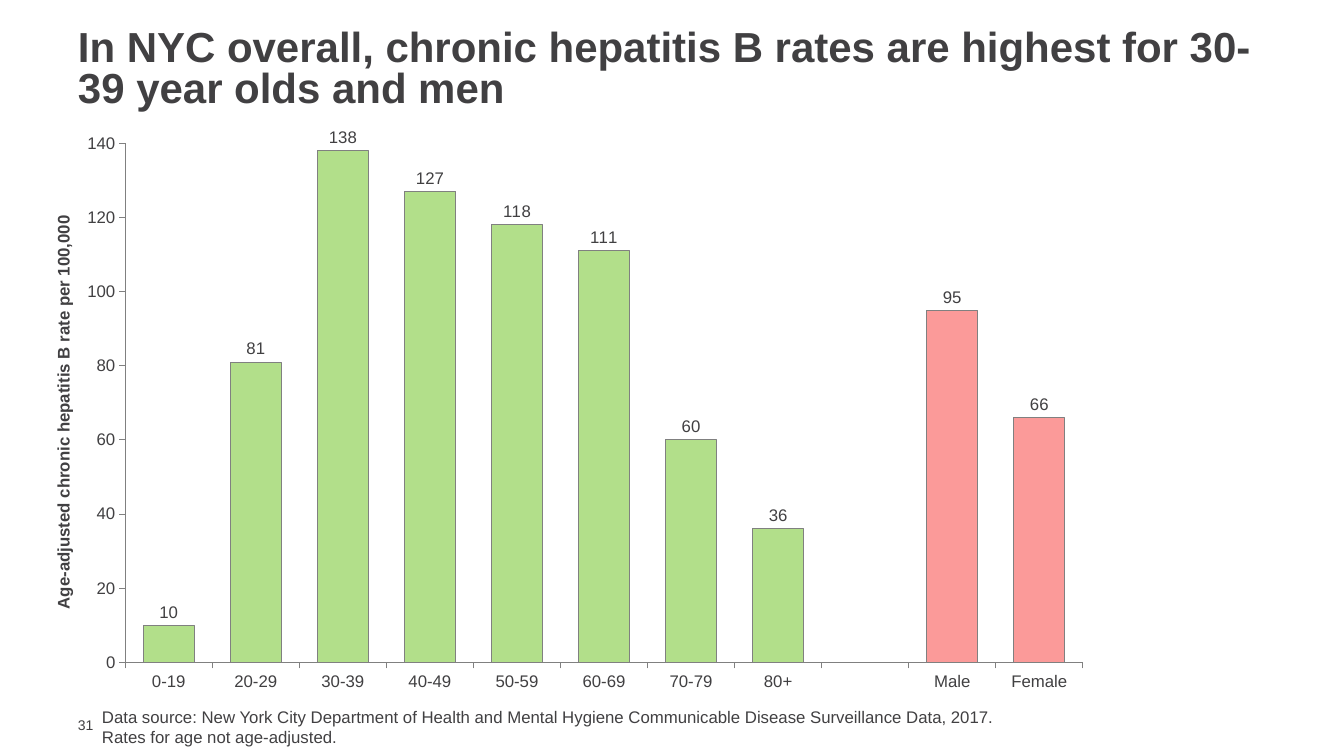
from dataclasses import dataclass

from lxml import etree
from pptx import Presentation
from pptx.chart.data import CategoryChartData
from pptx.dml.color import RGBColor
from pptx.enum.chart import XL_CHART_TYPE as ChartType
from pptx.enum.chart import XL_LABEL_POSITION as LabelPos
from pptx.enum.chart import XL_TICK_MARK as Tick
from pptx.enum.text import MSO_ANCHOR as Anchor
from pptx.oxml import parse_xml
from pptx.oxml.ns import nsdecls, qn
from pptx.util import Pt

PX = 914400 / 100.8


def px(n):
    return round(n * PX)


@dataclass(frozen=True)
class Theme:
    font: str = "Arial"
    text: RGBColor = RGBColor(0x41, 0x40, 0x42)
    line: RGBColor = RGBColor(0x80, 0x80, 0x80)
    age: RGBColor = RGBColor(0xB2, 0xDF, 0x8A)
    sex: RGBColor = RGBColor(0xFB, 0x9A, 0x99)
    title: int = 30
    body: int = 12
    small: int = 10


class Deck:
    def __init__(self, theme):
        self.theme = theme
        self.prs = Presentation()
        self.prs.slide_width, self.prs.slide_height = px(1344), px(756)
        self.s = self.prs.slides.add_slide(self.prs.slide_layouts[6])

    def style_font(self, font, size, bold=False):
        font.name, font.size, font.bold = self.theme.font, Pt(size), bold
        font.color.rgb = self.theme.text

    def style_line(self, line):
        line.color.rgb, line.width = self.theme.line, Pt(0.75)

    def text(self, box, lines, size, bold=False, anchor=Anchor.TOP,
             spacing=None, inset_y=5):
        tf = self.s.shapes.add_textbox(*map(px, box)).text_frame
        tf.word_wrap, tf.vertical_anchor = True, anchor
        tf.margin_left, tf.margin_right = px(10), 0
        tf.margin_top = tf.margin_bottom = px(inset_y)
        for i, line in enumerate(lines):
            p = tf.paragraphs[0] if i == 0 else tf.add_paragraph()
            p.line_spacing = spacing
            r = p.add_run()
            r.text = line
            self.style_font(r.font, size, bold)

    def axis(self, axis):
        axis.has_major_gridlines = False
        axis.major_tick_mark, axis.minor_tick_mark = Tick.OUTSIDE, Tick.NONE
        self.style_font(axis.tick_labels.font, self.theme.body)
        self.style_line(axis.format.line)

    def column_chart(self, box, groups, axis_title, top, plot_box):
        """Draw (colour, {category: value}) groups as one series."""
        data = CategoryChartData(number_format="0")
        bars = [(cat, val, colour) for colour, rates in groups
                for cat, val in rates.items()]
        data.categories = [cat for cat, _, _ in bars]
        data.add_series("Series 1", [val for _, val, _ in bars])
        chart = self.s.shapes.add_chart(
            ChartType.COLUMN_CLUSTERED, *map(px, box), data).chart
        chart.has_legend = chart.has_title = False
        self.style_font(chart.font, self.theme.small)

        self.axis(chart.category_axis)
        value = chart.value_axis
        self.axis(value)
        value.minimum_scale, value.maximum_scale = 0, top
        value.major_unit = 20
        value.tick_labels.number_format = "0"
        value.tick_labels.number_format_is_linked = False
        tf = value.axis_title.text_frame
        r = tf.paragraphs[0].add_run()
        r.text = axis_title
        self.style_font(r.font, self.theme.body, True)

        plot = chart.plots[0]
        plot.gap_width, plot.vary_by_categories = 70, False
        series = plot.series[0]
        base = bars[0][2]
        series.format.fill.solid()
        series.format.fill.fore_color.rgb = base
        self.style_line(series.format.line)
        for i, (_, _, colour) in enumerate(bars):
            if colour != base:
                fmt = series.points[i].format
                fmt.fill.solid()
                fmt.fill.fore_color.rgb = colour
                self.style_line(fmt.line)
        labels = series.data_labels
        labels.show_value, labels.position = True, LabelPos.OUTSIDE_END
        labels.number_format, labels.number_format_is_linked = "0", False
        self.style_font(labels.font, self.theme.body)
        self.place_plot(chart, plot_box)

    def place_plot(self, chart, plot_box):
        """Fix the inner plot area, given as fractions of the chart."""
        area = chart.element.find(".//" + qn("c:plotArea"))
        for old in area.findall(qn("c:layout")):
            area.remove(old)
        layout = parse_xml(f"<c:layout {nsdecls('c')}/>")
        manual = etree.SubElement(layout, qn("c:manualLayout"))
        settings = [("layoutTarget", "inner"), ("xMode", "edge"),
                    ("yMode", "edge"), *zip("xywh", plot_box)]
        for tag, val in settings:
            etree.SubElement(manual, qn("c:" + tag)).set("val", str(val))
        area.insert(0, layout)


def main():
    theme = Theme()
    deck = Deck(theme)
    deck.text((68, 716, 43, 17), ["31"], theme.small,
              anchor=Anchor.MIDDLE, inset_y=0)
    deck.text((68, 25, 1210, 92),
              ["In NYC overall, chronic hepatitis B rates are highest for "
               "30-39 year olds and men"],
              theme.title, bold=True, anchor=Anchor.MIDDLE, spacing=0.8)
    by_age = {"0-19": 10, "20-29": 81, "30-39": 138, "40-49": 127,
              "50-59": 118, "60-69": 111, "70-79": 60, "80+": 36, "": None}
    by_sex = {"Male": 95, "Female": 66}
    deck.column_chart((50, 126, 1076, 577),
                      [(theme.age, by_age), (theme.sex, by_sex)],
                      "Age-adjusted chronic hepatitis B rate per 100,000",
                      top=140, plot_box=(0.07, 0.03, 0.89, 0.9))
    deck.text((92, 702, 1000, 50),
              ["Data source: New York City Department of Health and Mental "
               "Hygiene Communicable Disease Surveillance Data, 2017.",
               "Rates for age not age-adjusted."], theme.body)
    deck.prs.save("out.pptx")


if __name__ == "__main__":
    main()
